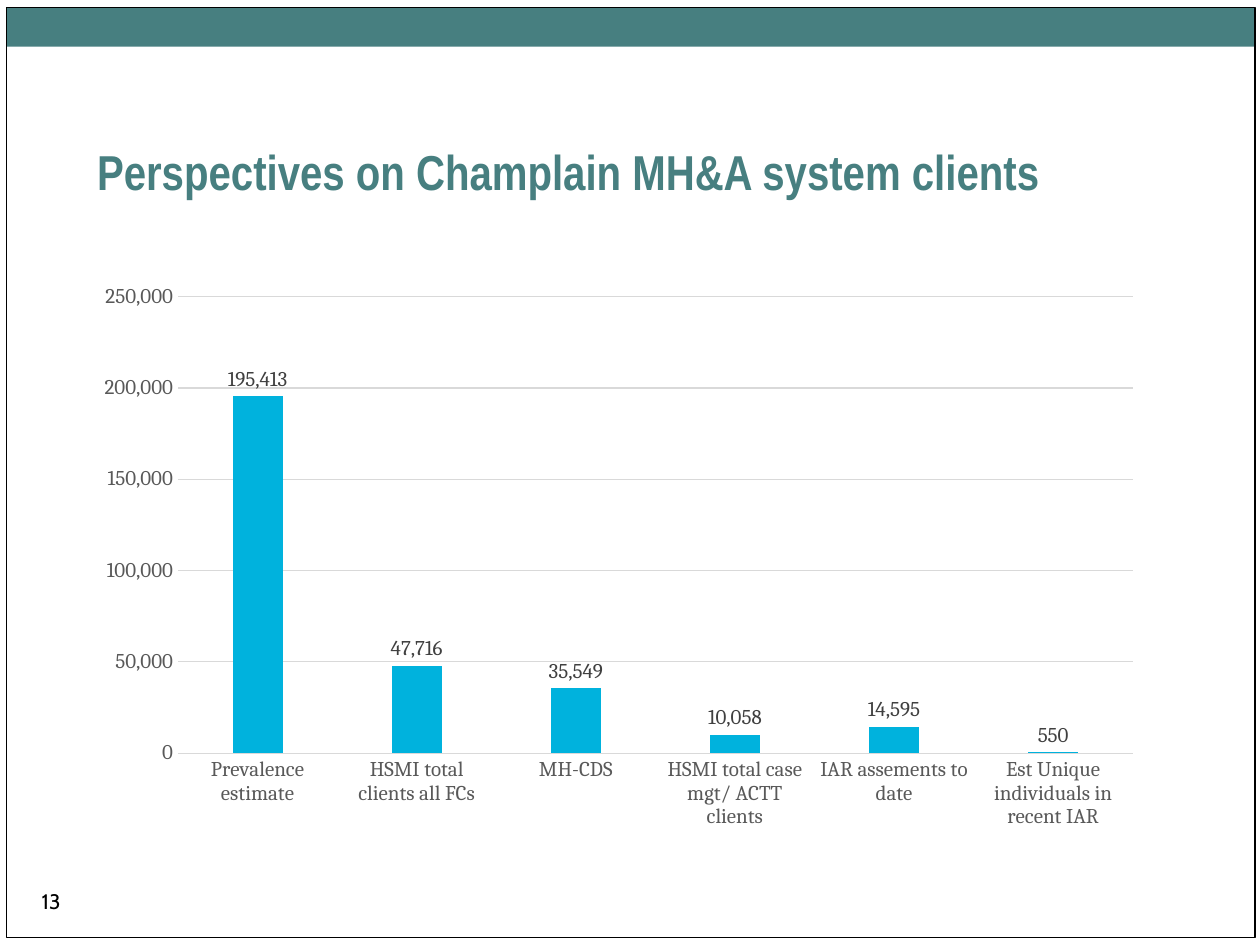
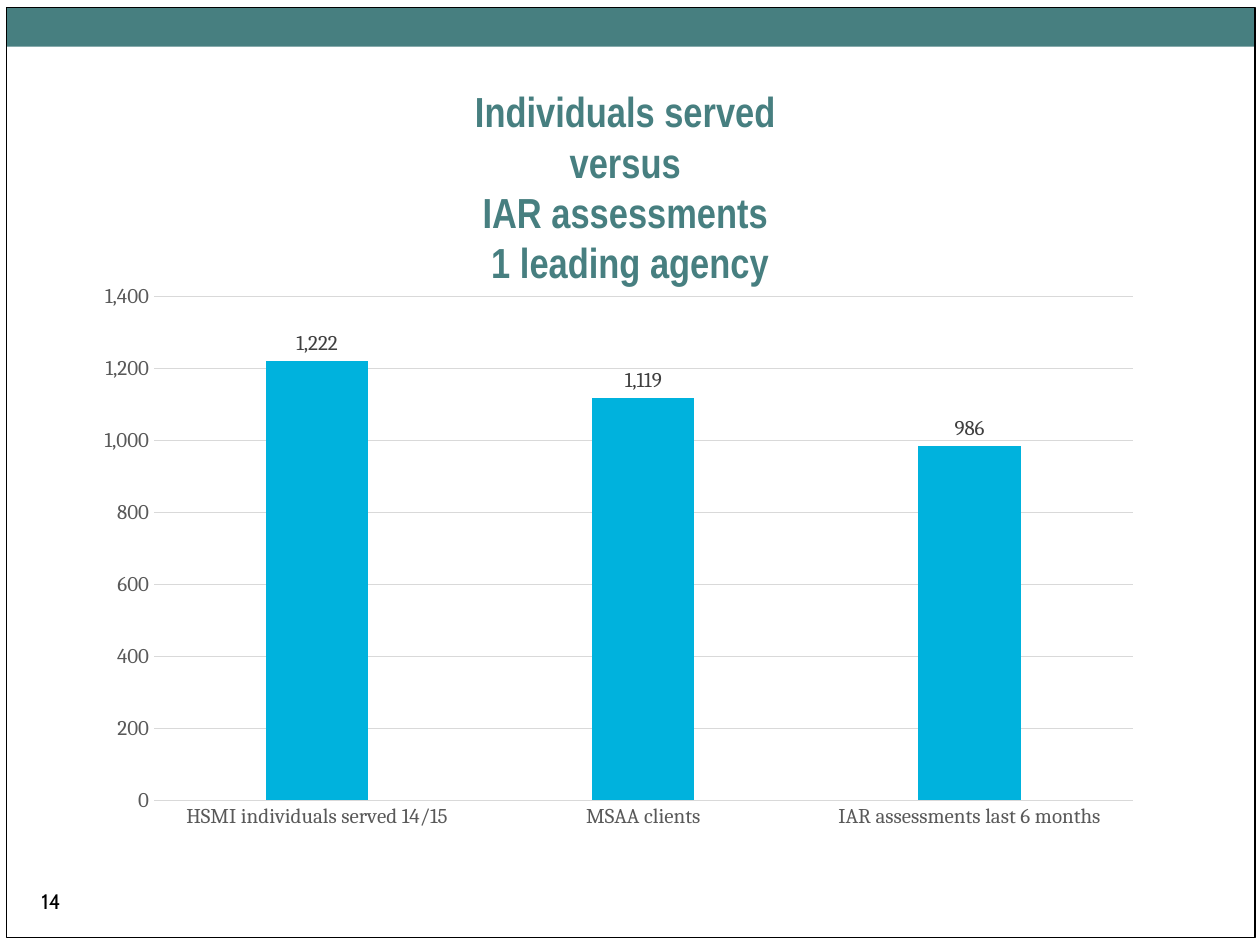
import pptx
import pptx.chart.data
import pptx.dml.color
import pptx.enum.chart
import pptx.enum.shapes
import pptx.enum.text
import pptx.util

Inches = pptx.util.Inches
Pt = pptx.util.Pt
ALIGN = pptx.enum.text.PP_ALIGN
NO_TICKS = pptx.enum.chart.XL_TICK_MARK.NONE

TEAL = "477F80"
BAR_BLUE = "00B2DD"
GRID_GREY = "D9D9D9"
AXIS_GREY = "595959"
LABEL_GREY = "404040"
BLACK = "000000"


def color(hex_string):
    return pptx.dml.color.RGBColor.from_string(hex_string)


def style_font(font, name, size, hex_string, bold=False):
    font.name = name
    font.size = Pt(size)
    font.color.rgb = color(hex_string)
    font.bold = bold


slide_contents = [
    {
        "number": "13",
        "title_lines": ["Perspectives on Champlain MH&A system clients"],
        "title_box": (0.67, 0.64, 8.5, 1),
        "title_size": 28,
        "title_alignment": ALIGN.LEFT,
        "bars": {
            "Prevalence estimate": 195413,
            "HSMI total clients all FCs": 47716,
            "MH-CDS": 35549,
            "HSMI total case mgt/ ACTT clients": 10058,
            "IAR assements to date": 14595,
            "Est Unique individuals in recent IAR": 550,
        },
        "axis_maximum": 250000,
        "axis_step": 50000,
    },
    {
        "number": "14",
        "title_lines": ["Individuals served ", "versus ", "IAR assessments ", "1 leading agency"],
        "title_box": (0.75, 0.58, 8.5, 1.75),
        "title_size": 24,
        "title_alignment": ALIGN.CENTER,
        "bars": {
            "HSMI individuals served 14/15": 1222,
            "MSAA clients": 1119,
            "IAR assessments last 6 months": 986,
        },
        "axis_maximum": 1400,
        "axis_step": 200,
    },
]

presentation = pptx.Presentation()
presentation.slide_width = Inches(10)
presentation.slide_height = Inches(7.5)
title_only_layout = presentation.slide_layouts[5]

for content in slide_contents:
    slide = presentation.slides.add_slide(title_only_layout)

    rectangle = pptx.enum.shapes.MSO_SHAPE.RECTANGLE
    band = slide.shapes.add_shape(rectangle, Inches(0.05), Inches(0.06), Inches(9.91), Inches(0.31))
    band.shadow.inherit = False
    band.fill.solid()
    band.fill.fore_color.rgb = color(TEAL)
    band.line.fill.background()

    frame = slide.shapes.add_shape(rectangle, Inches(0.05), Inches(0.06), Inches(9.91), Inches(7.38))
    frame.shadow.inherit = False
    frame.fill.background()
    frame.line.color.rgb = color(BLACK)
    frame.line.width = Pt(0.75)

    title = slide.shapes.title
    title.left, title.top, title.width, title.height = map(Inches, content["title_box"])
    title.text_frame.auto_size = pptx.enum.text.MSO_AUTO_SIZE.NONE
    title.text_frame.vertical_anchor = pptx.enum.text.MSO_ANCHOR.BOTTOM
    paragraph = title.text_frame.paragraphs[0]
    paragraph.alignment = content["title_alignment"]
    for index, line in enumerate(content["title_lines"]):
        if index:
            paragraph.add_line_break()
        run = paragraph.add_run()
        run.text = line
        style_font(run.font, "Arial Narrow", content["title_size"], TEAL, bold=True)

    chart_data = pptx.chart.data.CategoryChartData(number_format="#,##0")
    chart_data.categories = list(content["bars"])
    chart_data.add_series("Series 1", list(content["bars"].values()))
    chart = slide.shapes.add_chart(
        pptx.enum.chart.XL_CHART_TYPE.COLUMN_CLUSTERED,
        Inches(0.66), Inches(2.17), Inches(8.5), Inches(4.5), chart_data,
    ).chart
    chart.has_legend = False
    chart.has_title = False
    style_font(chart.font, "Cambria", 10, BLACK)

    for axis in (chart.category_axis, chart.value_axis):
        axis.major_tick_mark = NO_TICKS
        axis.minor_tick_mark = NO_TICKS
        style_font(axis.tick_labels.font, "Cambria", 12, AXIS_GREY)

    value_axis = chart.value_axis
    value_axis.minimum_scale = 0
    value_axis.maximum_scale = content["axis_maximum"]
    value_axis.major_unit = content["axis_step"]
    value_axis.tick_labels.number_format = "#,##0"
    value_axis.tick_labels.number_format_is_linked = False
    value_axis.format.line.fill.background()
    value_axis.has_major_gridlines = True
    for line in (chart.category_axis.format.line, value_axis.major_gridlines.format.line):
        line.color.rgb = color(GRID_GREY)
        line.width = Pt(0.75)

    plot = chart.plots[0]
    plot.vary_by_categories = False
    plot.gap_width = 219
    plot.overlap = -27
    series = plot.series[0]
    series.format.fill.solid()
    series.format.fill.fore_color.rgb = color(BAR_BLUE)

    labels = series.data_labels
    labels.show_value = True
    labels.number_format = "#,##0"
    labels.number_format_is_linked = False
    labels.position = pptx.enum.chart.XL_LABEL_POSITION.OUTSIDE_END
    style_font(labels.font, "Cambria", 12, LABEL_GREY)

    number_box = slide.shapes.add_textbox(Inches(0.08), Inches(7), Inches(0.5), Inches(0.5))
    number_box.text_frame.word_wrap = True
    paragraph = number_box.text_frame.paragraphs[0]
    paragraph.alignment = ALIGN.RIGHT
    run = paragraph.add_run()
    run.text = content["number"]
    style_font(run.font, "Cabin", 12, BLACK)

presentation.save("out.pptx")
